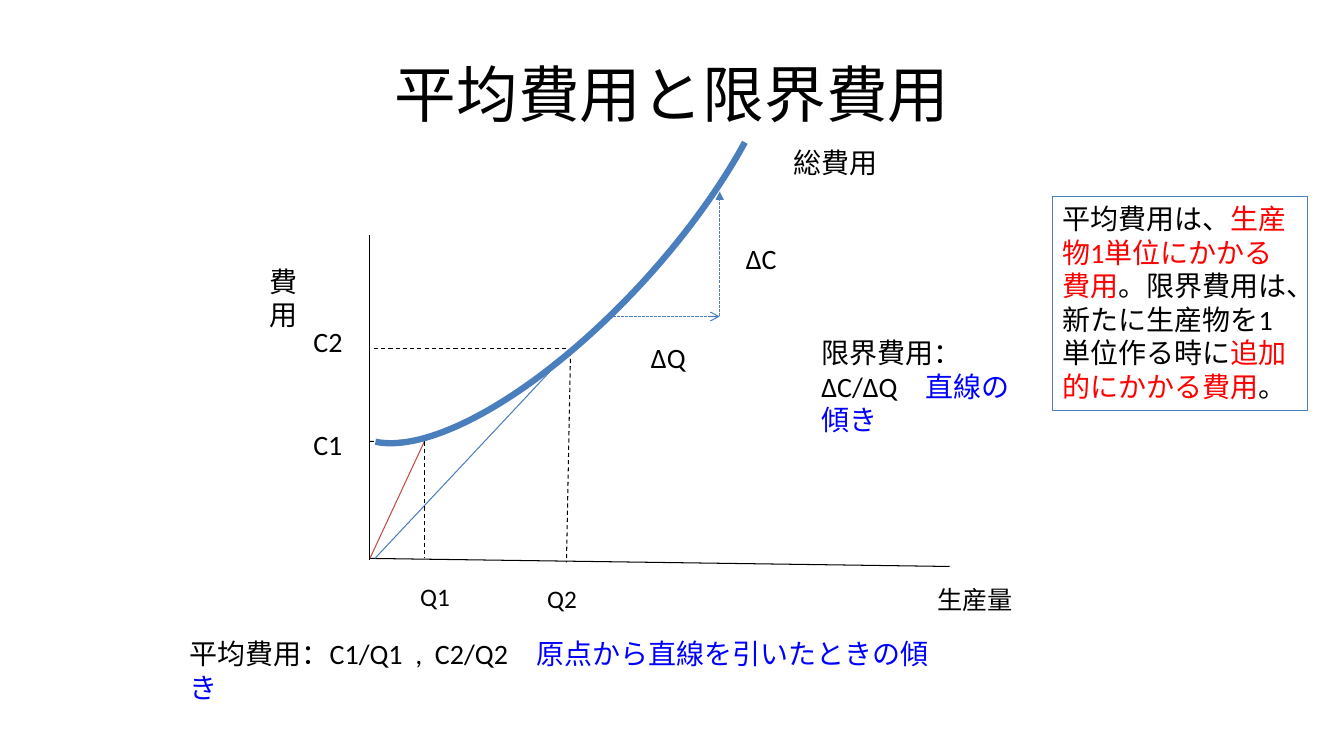
from lxml import etree
from pptx import Presentation
from pptx.dml.color import RGBColor
from pptx.enum.dml import MSO_LINE
from pptx.enum.shapes import MSO_CONNECTOR, MSO_SHAPE
from pptx.enum.text import MSO_ANCHOR, MSO_AUTO_SIZE, PP_ALIGN
from pptx.oxml.ns import qn
from pptx.util import Inches, Pt

CELL = 0.1
COLUMNS, ROWS = 133.33, 75
FONT = "Calibri"
COLORS = {
    "black": "000000",
    "curve": "4B7EBC",
    "ray": "BF4C48",
    "slope": "0000FF",
    "emphasis": "FF0000",
}
STRAIGHT = MSO_CONNECTOR.STRAIGHT
ARC, RECTANGLE = MSO_SHAPE.ARC, MSO_SHAPE.RECTANGLE
DASH, FINE_DASH = MSO_LINE.DASH, MSO_LINE.SQUARE_DOT
TOP, MIDDLE = MSO_ANCHOR.TOP, MSO_ANCHOR.MIDDLE
LEFT, CENTER = PP_ALIGN.LEFT, PP_ALIGN.CENTER
GROW = MSO_AUTO_SIZE.SHAPE_TO_FIT_TEXT

ORIGIN = (36.7, 55.4)
FIRST_POINT = (42.1, 43.8)
SECOND_POINT = (56.4, 34.9)
DELTA_CORNER = (71.4, 31.4)


def cells(*counts):
    return [Inches(count * CELL) for count in counts]


def color(name):
    return RGBColor.from_string(COLORS[name])


def style_line(line, color_name, width=0.75):
    line.color.rgb = color(color_name)
    line.width = Pt(width)


def write_runs(text_frame, runs, size, alignment=LEFT):
    paragraph = text_frame.paragraphs[0]
    paragraph.alignment = alignment
    for text, color_name in runs:
        run = paragraph.add_run()
        run.text = text
        run.font.name = FONT
        run.font.size = Pt(size)
        run.font.color.rgb = color(color_name)


def add_title(slide, text):
    title = slide.shapes.title
    title.left, title.top, title.width, title.height = cells(6.7, 3, 120, 12.5)
    title.text_frame.vertical_anchor = MIDDLE
    write_runs(title.text_frame, [(text, "black")], 44, CENTER)


def add_line(slide, start, end, color_name="black", dash=None, arrow=None):
    connector = slide.shapes.add_connector(STRAIGHT, *cells(*start, *end))
    style_line(connector.line, color_name)
    if dash:
        connector.line.dash_style = dash
    if arrow:
        outline = connector.line._get_or_add_ln()
        etree.SubElement(outline, qn("a:tailEnd"), type=arrow)
    properties = connector._element.spPr
    etree.SubElement(properties, qn("a:effectLst"))


def add_text(slide, area, runs, size=20):
    box = slide.shapes.add_textbox(*cells(*area))
    box.text_frame.word_wrap = True
    box.text_frame.auto_size = GROW
    write_runs(box.text_frame, runs, size)


def add_outline_shape(slide, preset, area, width):
    shape = slide.shapes.add_shape(preset, *cells(*area))
    shape.shadow.inherit = False
    shape.fill.background()
    style_line(shape.line, "curve", width)
    return shape


def add_cost_curve(slide):
    curve = add_outline_shape(slide, ARC, (25, 8.8, 61.1, 22.7), 4.5)
    curve.rotation = 132.4
    curve.adjustments[0] = 125.63
    curve.adjustments[1] = 213.19


def add_definition(slide, area, runs):
    box = add_outline_shape(slide, RECTANGLE, area, 0.75)
    box.text_frame.word_wrap = True
    box.text_frame.auto_size = GROW
    box.text_frame.vertical_anchor = TOP
    write_runs(box.text_frame, runs, 20)


def add_diagram(slide):
    axis_x, axis_y = ORIGIN
    first_x, first_y = FIRST_POINT
    corner_x, corner_y = DELTA_CORNER

    add_line(slide, (axis_x, 23.3), (axis_x, 55.6))
    add_line(slide, ORIGIN, (94.2, 56.2))
    add_line(slide, (60.4, corner_y), DELTA_CORNER, "curve", FINE_DASH, "arrow")
    add_line(slide, DELTA_CORNER, (corner_x, 19), "curve", FINE_DASH, "triangle")
    add_line(slide, ORIGIN, FIRST_POINT, "ray")
    add_line(slide, (37.2, axis_y), SECOND_POINT, "curve")
    add_line(slide, FIRST_POINT, (first_x, axis_y), dash=DASH)
    add_line(slide, (56.6, 34.9), (56.2, 55.8), dash=DASH)
    add_line(slide, (37.1, 34.6), (56.4, 34.6), dash=DASH)
    add_line(slide, (first_x, 43.6), (axis_x, first_y), dash=DASH)


def add_labels(slide):
    labels = [
        ("Q1", (40.7, 57.2, 7.9, 4), 18),
        ("Q2", (53.3, 57.4, 7.1, 4), 18),
        ("C1", (30.1, 41.9, 7.7, 4.4), 20),
        ("C2", (30.1, 31.7, 5.5, 4.4), 20),
        ("ΔQ", (63.6, 33.3, 8.7, 4.4), 20),
        ("ΔC", (73, 23.5, 14.2, 4.4), 20),
        ("生産量", (92, 57.5, 10.2, 4), 18),
        ("費用", (25.8, 25.7, 3.4, 7.7), 20),
        ("総費用", (77.7, 13.9, 14.3, 4.4), 20),
    ]
    for text, area, size in labels:
        add_text(slide, area, [(text, "black")], size)


def add_explanations(slide):
    add_text(slide, (17.8, 62.7, 78, 4.4), [
        ("平均費用：C1/Q1  ,  C2/Q2　", "black"),
        ("原点から直線を引いたときの傾き", "slope"),
    ])
    add_text(slide, (80.5, 32.8, 21.3, 11.1), [
        ("限界費用：ΔC/ΔQ　", "black"),
        ("直線の傾き", "slope"),
    ])
    add_definition(slide, (104.4, 19.5, 25.3, 21.2), [
        ("平均費用は、", "black"),
        ("生産物1単位にかかる費用", "emphasis"),
        ("。限界費用は、新たに生産物を1単位作る時に", "black"),
        ("追加的にかかる費用", "emphasis"),
        ("。", "black"),
    ])


def main():
    presentation = Presentation()
    presentation.slide_width, presentation.slide_height = cells(COLUMNS, ROWS)
    slide = presentation.slides.add_slide(presentation.slide_layouts[5])
    add_title(slide, "平均費用と限界費用")
    add_diagram(slide)
    add_labels(slide)
    add_explanations(slide)
    add_cost_curve(slide)
    presentation.save("out.pptx")


if __name__ == "__main__":
    main()
